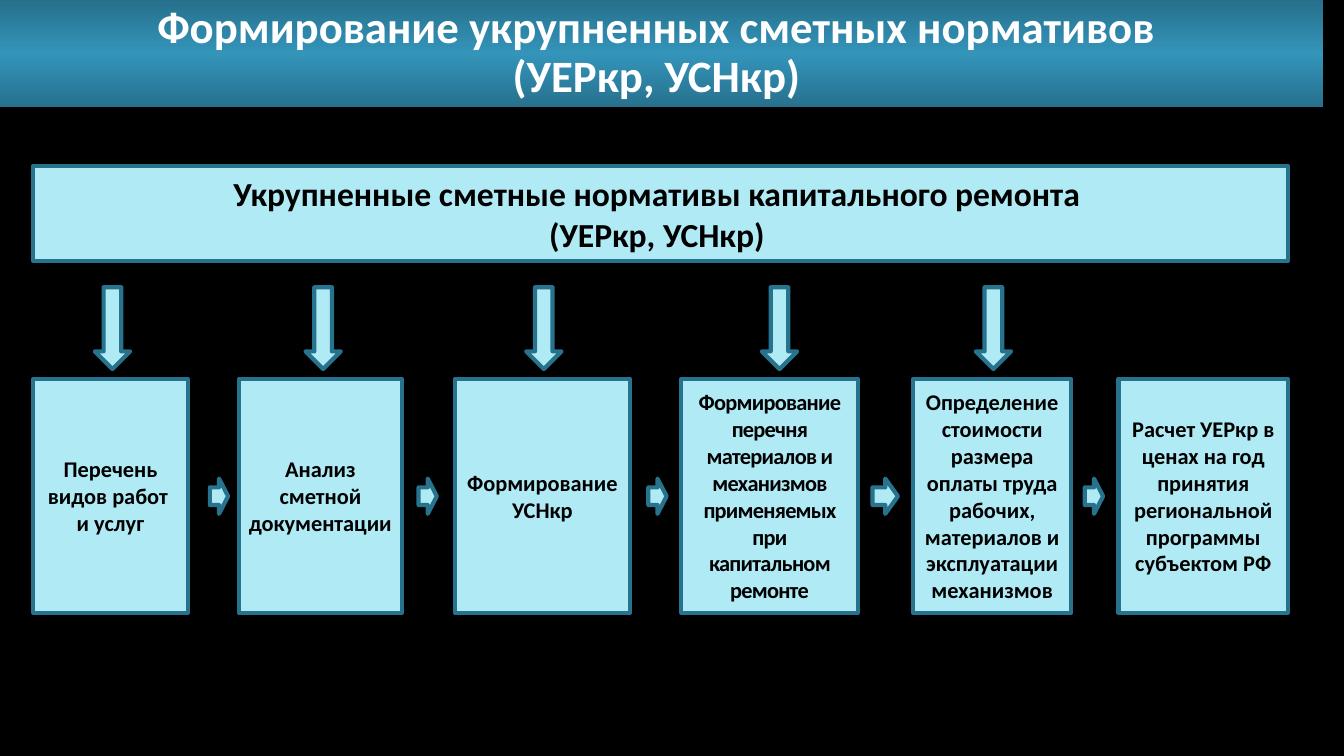
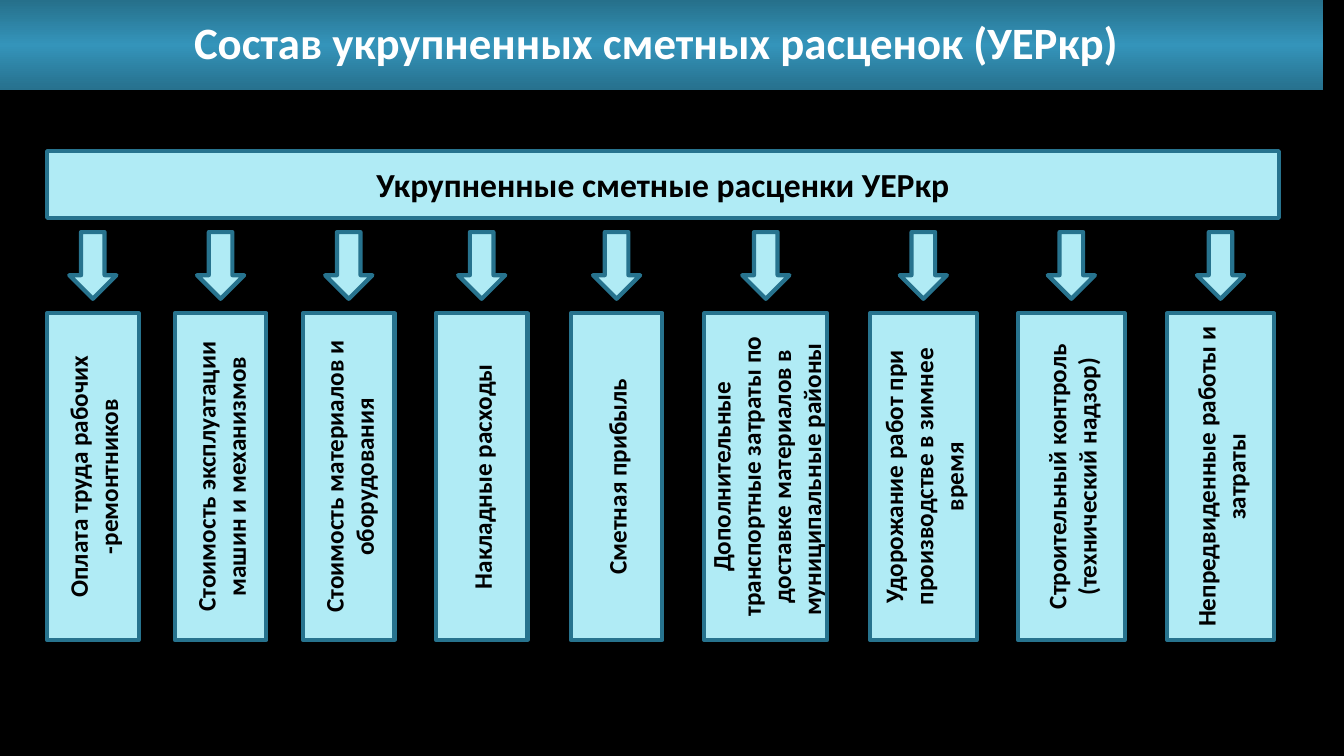
from copy import deepcopy

from pptx import Presentation
from pptx.dml.color import RGBColor
from pptx.enum.shapes import MSO_SHAPE as Shape
from pptx.enum.text import MSO_ANCHOR as Anchor, PP_ALIGN as Align
from pptx.oxml.ns import qn
from pptx.util import Cm, Pt

rgb = RGBColor.from_string
BACKGROUND, WHITE, BLACK = "000000", "FFFFFF", "000000"
PALE, EDGE = "B0EBF5", "27738E"
BAND_STOPS = [(0, "27718E"), (0.5, "3494BA"), (1, "26708B")]
FONT = "Calibri"

prs = Presentation()
prs.slide_width, prs.slide_height = Cm(33.87), Cm(19.05)


def add_block(slide, kind, left, top, width, height, text="", size=16, color=BLACK):
    """Add a pale, outlined shape with bold centred text; lengths are in cm."""
    block = slide.shapes.add_shape(kind, Cm(left), Cm(top), Cm(width), Cm(height))
    block.shadow.inherit = False
    block.fill.solid()
    block.fill.fore_color.rgb = rgb(PALE)
    block.line.color.rgb = rgb(EDGE)
    block.line.width = Pt(3)
    frame = block.text_frame
    frame.word_wrap = True
    frame.vertical_anchor = Anchor.MIDDLE
    frame.text = text
    paragraph = frame.paragraphs[0]
    paragraph.alignment = Align.CENTER
    for run in paragraph.runs:
        run.font.name = FONT
        run.font.size = Pt(size)
        run.font.bold = True
        run.font.color.rgb = rgb(color)
    return block


def start_slide(title, band_height):
    """Add a black slide with the gradient title band."""
    slide = prs.slides.add_slide(prs.slide_layouts[6])
    slide.background.fill.solid()
    slide.background.fill.fore_color.rgb = rgb(BACKGROUND)
    band = add_block(slide, Shape.RECTANGLE, 0, 0, 33.35, band_height, title, 32, WHITE)
    band.text_frame.paragraphs[0].line_spacing = 0.9
    band.line.fill.background()
    band.fill.gradient()
    band.fill.gradient_angle = 90
    stop_list = band._element.spPr.find(".//" + qn("a:gsLst"))
    stop_list.insert(1, deepcopy(stop_list[0]))
    for stop, (position, color) in zip(band.fill.gradient_stops, BAND_STOPS):
        stop.position = position
        stop.color.rgb = rgb(color)
    return slide


# Slide 1: how the norms are formed
forming = start_slide("Формирование укрупненных сметных нормативов \v(УЕРкр, УСНкр) ", 2.69)
add_block(forming, Shape.RECTANGLE, 0.84, 4.19, 31.62, 2.39,
          "Укрупненные сметные нормативы капитального ремонта \v(УЕРкр, УСНкр) ", 24)

STEP_TOP, STEP_HEIGHT = 9.55, 5.89
# text, left, width, letter spacing in 1/100 pt
steps = [
    ("Перечень видов работ \vи услуг", 0.84, 3.89, 0),
    ("Анализ сметной документации", 6.02, 4.11, 0),
    ("Формирование УСНкр", 11.46, 4.42, 0),
    ("Формирование перечня материалов и механизмов применяемых при капитальном ремонте",
     17.17, 4.45, -50),
    ("Определение стоимости размера оплаты труда рабочих, материалов и эксплуатации механизмов",
     23.01, 3.99, 0),
    ("Расчет УЕРкр в ценах на год принятия региональной программы субъектом РФ",
     28.19, 4.27, 0),
]
for text, left, width, spacing in steps:
    step = add_block(forming, Shape.RECTANGLE, left, STEP_TOP, width, STEP_HEIGHT, text)
    if spacing:
        for run in step.text_frame.paragraphs[0].runs:
            run._r.get_or_add_rPr().set("spc", str(spacing))

for left in (2.39, 7.7, 13.26, 19.2, 24.59):
    add_block(forming, Shape.DOWN_ARROW, left, 7.24, 0.89, 2.06)
for left, width in ((5.29, 0.46), (10.55, 0.46), (16.34, 0.46), (21.99, 0.64), (27.34, 0.46)):
    add_block(forming, Shape.RIGHT_ARROW, left, 12.06, width, 0.89)

# Slide 2: what the rates consist of
rates = start_slide("Состав укрупненных сметных расценок (УЕРкр) ", 2.26)
add_block(rates, Shape.RECTANGLE, 1.19, 3.81, 31.04, 1.68,
          "Укрупненные сметные расценки УЕРкр", 24)

COST_MIDDLE, COST_LENGTH = 12.01, 8.23
ARROW_WIDTH, ARROW_HEIGHT = 1.19, 1.68
# text, centre, width
costs = [
    ("Оплата труда рабочих -ремонтников", 2.34, 2.31),
    ("Стоимость эксплуатации машин и механизмов", 5.56, 2.31),
    ("Стоимость материалов и оборудования", 8.79, 2.31),
    ("Накладные расходы", 12.14, 2.31),
    ("Сметная прибыль", 15.54, 2.31),
    ("Дополнительные транспортные затраты по доставке материалов в муниципальные районы ",
     19.3, 3.1),
    ("Удорожание работ при производстве в зимнее время", 23.27, 2.69),
    ("Строительный контроль (технический надзор)", 27, 2.69),
    ("Непредвиденные работы и затраты", 30.76, 2.69),
]
for text, centre, width in costs:
    cost = add_block(rates, Shape.RECTANGLE, centre - COST_LENGTH / 2, COST_MIDDLE - width / 2,
                     COST_LENGTH, width, text, 18)
    cost.rotation = 270
    add_block(rates, Shape.DOWN_ARROW, centre - ARROW_WIDTH / 2, 5.85, ARROW_WIDTH, ARROW_HEIGHT)

prs.save("out.pptx")
